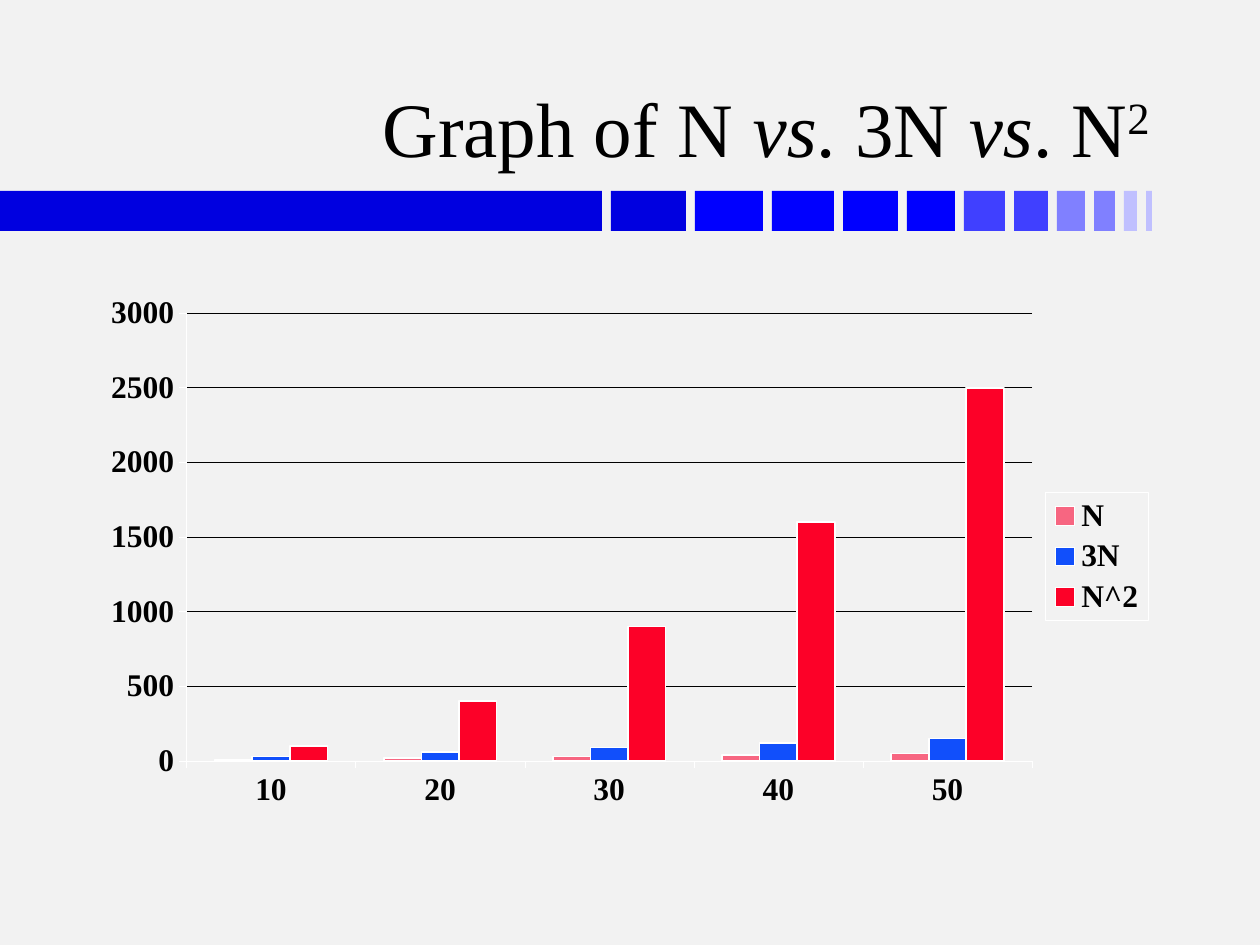
import pptx
import pptx.chart.data
import pptx.dml.color
import pptx.enum.chart
import pptx.enum.shapes
import pptx.enum.text
import pptx.oxml
import pptx.oxml.ns
import pptx.util

RGBColor = pptx.dml.color.RGBColor
BACKGROUND = RGBColor(0xF2, 0xF2, 0xF2)
BLACK = RGBColor(0, 0, 0)
WHITE = RGBColor(0xFF, 0xFF, 0xFF)
NAVY = RGBColor(0, 0, 0xE0)
BLUE = RGBColor(0, 0, 0xFF)
MID_BLUE = RGBColor(0x40, 0x40, 0xFF)
LIGHT_BLUE = RGBColor(0x80, 0x80, 0xFF)
PALE_BLUE = RGBColor(0xC0, 0xC0, 0xFF)
PINK = RGBColor(0xF7, 0x66, 0x81)
ROYAL = RGBColor(0x11, 0x4F, 0xFB)
RED = RGBColor(0xFC, 0x01, 0x28)

PX_PER_INCH = 126


def px(length):
    return pptx.util.Emu(round(length * 914400 / PX_PER_INCH))


class SlideBuilder:
    font_name = "Times New Roman"
    title_size = pptx.util.Pt(44)
    chart_size = pptx.util.Pt(18)
    hairline = pptx.util.Pt(0.25)

    def __init__(self, slide):
        self.slide = slide
        fill = slide.background.fill
        fill.solid()
        fill.fore_color.rgb = BACKGROUND

    def block(self, left, top, width, height, color):
        block = self.slide.shapes.add_shape(
            pptx.enum.shapes.MSO_SHAPE.RECTANGLE,
            px(left), px(top), px(width), px(height))
        block.shadow.inherit = False
        block.fill.solid()
        block.fill.fore_color.rgb = color
        block.line.fill.background()

    def title(self, left, top, width, height, runs):
        box = self.slide.shapes.add_textbox(px(left), px(top), px(width), px(height))
        frame = box.text_frame
        frame.word_wrap = True
        frame.vertical_anchor = pptx.enum.text.MSO_ANCHOR.BOTTOM
        paragraph = frame.paragraphs[0]
        paragraph.alignment = pptx.enum.text.PP_ALIGN.RIGHT
        for text, style in runs:
            run = paragraph.add_run()
            run.text = text
            run.font.name = self.font_name
            run.font.size = self.title_size
            run.font.color.rgb = BLACK
            run.font.italic = style == "italic"
            if style == "superscript":
                run.font._element.set("baseline", "30000")

    def style_line(self, line, color, width):
        line.color.rgb = color
        line.width = width

    def style_font(self, font):
        font.name = self.font_name
        font.size = self.chart_size
        font.bold = True
        font.color.rgb = BLACK

    def column_chart(self, left, top, width, height, categories, series, plot_area):
        data = pptx.chart.data.CategoryChartData(number_format="General")
        data.categories = categories
        for name, values, _ in series:
            data.add_series(name, values)
        chart = self.slide.shapes.add_chart(
            pptx.enum.chart.XL_CHART_TYPE.COLUMN_CLUSTERED,
            px(left), px(top), px(width), px(height), data).chart
        chart.has_title = False
        self.style_font(chart.font)

        # Columns
        plot = chart.plots[0]
        plot.gap_width = 150
        plot.overlap = 0
        plot.vary_by_categories = False
        for column, (_, _, color) in zip(plot.series, series):
            column.format.fill.solid()
            column.format.fill.fore_color.rgb = color
            self.style_line(column.format.line, WHITE, pptx.util.Pt(1))

        # Axes
        for axis in (chart.category_axis, chart.value_axis):
            axis.major_tick_mark = pptx.enum.chart.XL_TICK_MARK.OUTSIDE
            axis.minor_tick_mark = pptx.enum.chart.XL_TICK_MARK.NONE
            self.style_font(axis.tick_labels.font)
            self.style_line(axis.format.line, WHITE, self.hairline)
        chart.category_axis.tick_label_position = pptx.enum.chart.XL_TICK_LABEL_POSITION.LOW
        values_axis = chart.value_axis
        values_axis.minimum_scale = 0
        values_axis.maximum_scale = 3000
        values_axis.major_unit = 500
        values_axis.has_major_gridlines = True
        self.style_line(values_axis.major_gridlines.format.line, BLACK, self.hairline)

        self.legend(chart)
        self.place_plot(chart, plot_area)

    def legend(self, chart):
        chart.has_legend = True
        chart.legend.position = pptx.enum.chart.XL_LEGEND_POSITION.RIGHT
        chart.legend.include_in_layout = False
        self.style_font(chart.legend.font)
        border = pptx.oxml.parse_xml(
            f'<c:spPr {pptx.oxml.ns.nsdecls("c", "a")}><a:noFill/>'
            f'<a:ln w="{self.hairline}"><a:solidFill><a:srgbClr val="{WHITE}"/>'
            '</a:solidFill></a:ln></c:spPr>')
        legend = chart.legend._element
        legend.find(pptx.oxml.ns.qn("c:txPr")).addprevious(border)

    def place_plot(self, chart, plot_area):
        edges = "".join(f'<c:{key} val="{value}"/>'
                        for key, value in zip("xywh", plot_area))
        layout = pptx.oxml.parse_xml(
            f'<c:layout {pptx.oxml.ns.nsdecls("c")}><c:manualLayout>'
            '<c:layoutTarget val="inner"/><c:xMode val="edge"/><c:yMode val="edge"/>'
            f'{edges}</c:manualLayout></c:layout>')
        area = chart._chartSpace.chart.plotArea
        for automatic in area.findall(pptx.oxml.ns.qn("c:layout")):
            area.remove(automatic)
        area.insert(0, layout)


def main():
    deck = pptx.Presentation()
    deck.slide_width = px(1260)
    deck.slide_height = px(945)
    builder = SlideBuilder(deck.slides.add_slide(deck.slide_layouts[6]))

    # Fading band: blocks narrow towards the right, with equal gaps
    band_top, band_height, band_gap = 191, 40, 9
    band = [(602, NAVY), (75, NAVY), (68, BLUE), (62, BLUE), (55, BLUE), (48, BLUE),
            (41, MID_BLUE), (34, MID_BLUE), (28, LIGHT_BLUE), (21, LIGHT_BLUE),
            (13, PALE_BLUE), (6, PALE_BLUE)]
    left = 0
    for width, color in band:
        builder.block(left, band_top, width, band_height, color)
        left += width + band_gap

    # Title
    builder.title(93, 24, 1069, 155, [
        ("Graph of N ", "plain"), ("vs", "italic"), (". 3N ", "plain"),
        ("vs", "italic"), (". N", "plain"), ("2", "superscript")])

    # Growth chart
    sizes = [10, 20, 30, 40, 50]
    growth = [("N", sizes, PINK),
              ("3N", [3 * n for n in sizes], ROYAL),
              ("N^2", [n ** 2 for n in sizes], RED)]
    builder.column_chart(102, 280, 1057, 553, [str(n) for n in sizes], growth,
                         plot_area=(0.08, 0.06, 0.8, 0.81))

    deck.save("out.pptx")


if __name__ == "__main__":
    main()
